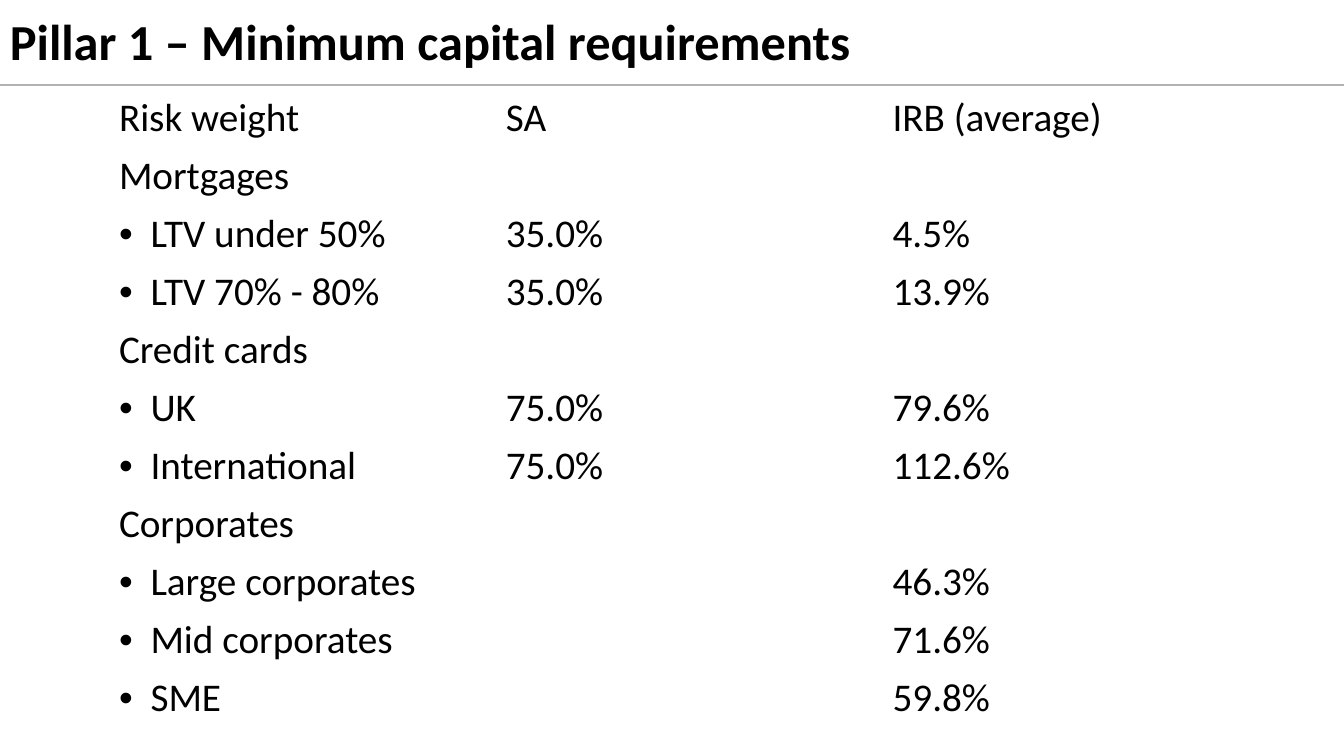
from lxml import etree
from pptx import Presentation
from pptx.dml.color import RGBColor
from pptx.enum.shapes import MSO_CONNECTOR
from pptx.enum.text import MSO_ANCHOR
from pptx.oxml.ns import qn
from pptx.util import Pt

STRAIGHT = MSO_CONNECTOR.STRAIGHT
MIDDLE = MSO_ANCHOR.MIDDLE

BLACK = RGBColor(0x00, 0x00, 0x00)
WHITE = RGBColor(0xFF, 0xFF, 0xFF)
RULE_GREY = RGBColor(0xB2, 0xB2, 0xB2)
FONT_NAME = "Calibri"

SLIDE_WIDTH, SLIDE_HEIGHT = 960, 540
TITLE_HEIGHT = 63.4
BULLET_INDENT = 22.5

HEADINGS = ("Risk weight", "SA", "IRB (average)")
RISK_WEIGHTS = {
    "Mortgages": [
        ("LTV under 50%", "35.0%", "4.5%"),
        ("LTV 70% - 80%", "35.0%", "13.9%"),
    ],
    "Credit cards": [
        ("UK", "75.0%", "79.6%"),
        ("International", "75.0%", "112.6%"),
    ],
    "Corporates": [
        ("Large corporates", "", "46.3%"),
        ("Mid corporates", "", "71.6%"),
        ("SME", "", "59.8%"),
    ],
}


def set_font(font, size, bold=False):
    font.name = FONT_NAME
    font.size = Pt(size)
    font.bold = bold
    font.color.rgb = BLACK


def add_bullet(paragraph):
    properties = paragraph._p.get_or_add_pPr()
    properties.set("marL", str(Pt(BULLET_INDENT)))
    properties.set("indent", str(-Pt(BULLET_INDENT)))
    etree.SubElement(properties, qn("a:buFont")).set("typeface", "Arial")
    etree.SubElement(properties, qn("a:buChar")).set("char", "•")


def add_title(slide, left, top, width, height):
    """Add the slide title and the rule close to the bottom of its box."""
    rule_top = Pt(top + height - 2.9)
    rule = slide.shapes.add_connector(
        STRAIGHT, Pt(left), rule_top, Pt(left + width), rule_top)
    rule.line.color.rgb = RULE_GREY
    rule.line.width = Pt(1.5)
    etree.SubElement(rule._element.spPr, qn("a:effectLst"))

    title = slide.shapes.add_textbox(Pt(left), Pt(top), Pt(width), Pt(height))
    text_frame = title.text_frame
    text_frame.word_wrap = True
    text_frame.vertical_anchor = MIDDLE
    text_frame.text = "Pillar 1 – Minimum capital requirements"
    paragraph = text_frame.paragraphs[0]
    paragraph.line_spacing = 0.9
    set_font(paragraph.runs[0].font, 36, bold=True)


def add_risk_weight_table(slide, left, top, width, height):
    rows = [(HEADINGS, False)]
    for category, exposures in RISK_WEIGHTS.items():
        rows.append(((category, "", ""), False))
        rows.extend((exposure, True) for exposure in exposures)

    table = slide.shapes.add_table(
        len(rows), len(HEADINGS), Pt(left), Pt(top), Pt(width), Pt(height)).table
    table.first_row = False
    table.horz_banding = False
    for row_index, (values, bulleted) in enumerate(rows):
        for column_index, value in enumerate(values):
            cell = table.cell(row_index, column_index)
            cell.fill.solid()
            cell.fill.fore_color.rgb = WHITE
            if not value:
                continue
            cell.text_frame.text = value
            paragraph = cell.text_frame.paragraphs[0]
            if bulleted and column_index == 0:
                add_bullet(paragraph)
            set_font(paragraph.runs[0].font, 28)


def main():
    presentation = Presentation()
    presentation.slide_width = Pt(SLIDE_WIDTH)
    presentation.slide_height = Pt(SLIDE_HEIGHT)
    slide = presentation.slides.add_slide(presentation.slide_layouts[6])
    add_risk_weight_table(slide, 77.8, TITLE_HEIGHT, 828.9, 448.8)
    add_title(slide, 0, 0, SLIDE_WIDTH, TITLE_HEIGHT)
    presentation.save("out.pptx")


if __name__ == "__main__":
    main()
